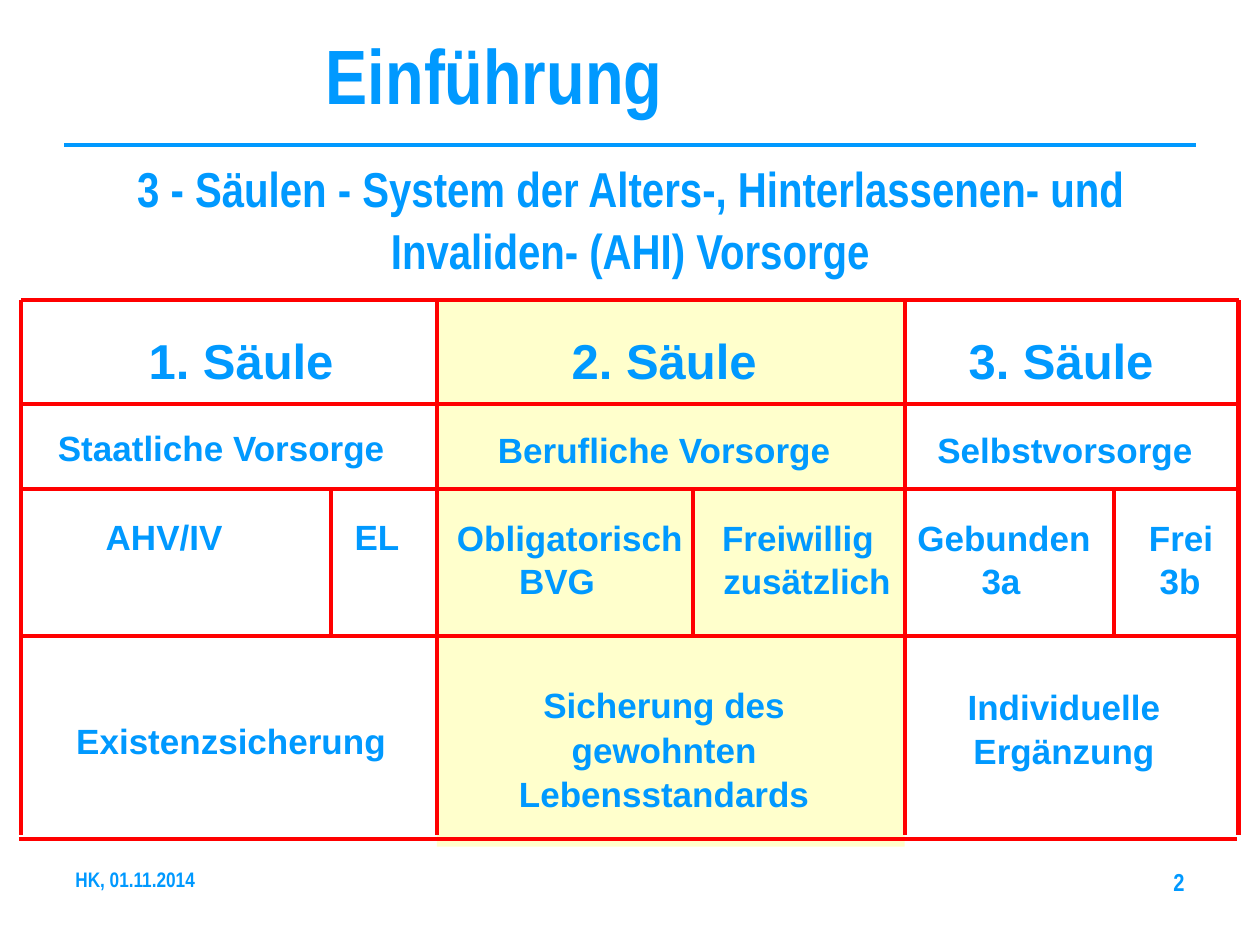
from lxml import etree
from pptx import Presentation
from pptx import util as u
from pptx.dml.color import RGBColor
from pptx.enum import shapes, text
from pptx.oxml import ns

BLUE = RGBColor(0x00, 0x99, 0xFF)
RED = RGBColor(0xFF, 0x00, 0x00)
CREAM = RGBColor(0xFF, 0xFF, 0xCC)
LEFT, MID, RIGHT = (text.PP_ALIGN.LEFT, text.PP_ALIGN.CENTER,
                    text.PP_ALIGN.RIGHT)

# Grid edges in cm
COLS = [0.43, 8.81, 18.24, 24.97]
ROWS = [6.05, 8.15, 9.86, 12.83]
SPLITS = [6.68, 13.97, 22.45]
END, BASE = 16.84, 16.92

# Labels: lines, centre x, centre y
HEADS = [("1. Säule", 4.86, 7.26), ("2. Säule", 13.39, 7.26),
         ("3. Säule", 21.39, 7.26)]
CELLS = [
    ("Staatliche Vorsorge", 4.46, 9.03),
    ("Berufliche Vorsorge", 13.39, 9.07),
    ("Selbstvorsorge", 21.47, 9.07),
    ("AHV/IV", 3.31, 10.81),
    ("EL", 7.6, 10.81),
    ("Obligatorisch", 11.49, 10.83),
    ("BVG", 11.23, 11.71),
    ("Freiwillig", 16.09, 10.83),
    ("zusätzlich", 16.27, 11.71),
    ("Gebunden", 20.24, 10.83),
    ("3a", 20.18, 11.71),
    ("Frei", 23.81, 10.83),
    ("3b", 23.79, 11.71),
    ("Existenzsicherung", 4.66, 14.92),
    ("Sicherung des\ngewohnten\nLebensstandards", 13.39, 15.08),
    ("Individuelle\nErgänzung", 21.45, 14.66),
]

deck = Presentation()
deck.slide_width, deck.slide_height = u.Cm(25.4), u.Cm(19.05)
slide = deck.slides.add_slide(deck.slide_layouts[6])


def write(words, x, y, w, h, size=20, font="Arial", align=MID,
          anchor=text.MSO_ANCHOR.TOP, wrap=True):
    box = slide.shapes.add_textbox(u.Cm(x), u.Cm(y), u.Cm(w), u.Cm(h))
    frame = box.text_frame
    frame.word_wrap = wrap
    frame.vertical_anchor = anchor
    for i, line in enumerate(words.split("\n")):
        para = frame.paragraphs[0] if i == 0 else frame.add_paragraph()
        para.alignment = align
        if "\n" in words:
            para.line_spacing = 1.05
        run = para.add_run()
        run.text = line
        run.font.size, run.font.name = u.Pt(size), font
        run.font.bold = True
        run.font.color.rgb = BLUE


def label(words, x, y, size=20):
    """Write words centred on a point."""
    w, h = 7.6, 0.3 + 0.05 * size * (words.count("\n") + 1)
    write(words, x - w / 2, y - h / 2, w, h, size,
          anchor=text.MSO_ANCHOR.MIDDLE, wrap=False)


def rule(x1, y1, x2, y2, color=RED, width=2.25):
    line = slide.shapes.add_connector(
        shapes.MSO_CONNECTOR.STRAIGHT,
        u.Cm(x1), u.Cm(y1), u.Cm(x2), u.Cm(y2))
    line.line.color.rgb = color
    line.line.width = u.Pt(width)
    etree.SubElement(line._element.spPr, ns.qn("a:effectLst"))


# Rule under the title and tint behind the second pillar
rule(1.3, 2.92, 24.1, 2.92, BLUE, 2)
tint = slide.shapes.add_shape(
    shapes.MSO_SHAPE.RECTANGLE, u.Cm(COLS[1]), u.Cm(ROWS[0]),
    u.Cm(COLS[2] - COLS[1]), u.Cm(11.02))
tint.shadow.inherit = False
tint.fill.solid()
tint.fill.fore_color.rgb = CREAM
tint.line.fill.background()

# Pillar texts
for words, x, y in HEADS:
    label(words, x, y, 28)
for words, x, y in CELLS:
    label(words, x, y)

# Grid lines
for y in ROWS:
    rule(COLS[0], y, COLS[-1], y)
rule(0.38, BASE, 24.94, BASE)
for x in COLS:
    rule(x, ROWS[0], x, END, width=3 if x == COLS[-1] else 2.25)
for x in SPLITS:
    rule(x, ROWS[2], x, ROWS[3])

# Titles and footer
NARROW = "Arial Narrow"
write("3 - Säulen - System der Alters-, Hinterlassenen- und\n"
      "Invaliden- (AHI) Vorsorge", 2.29, 3.02, 20.83, 2.64, 28, NARROW,
      wrap=False)
write("Einführung", 6.32, 0.43, 7.37, 2.13, 44, NARROW, LEFT, wrap=False)
write("HK, 01.11.2014", 1.27, 17.35, 5.92, 1.32, 12, NARROW, LEFT)
write("2", 18.21, 17.35, 5.92, 1.32, 14, NARROW, RIGHT)

deck.save("out.pptx")
